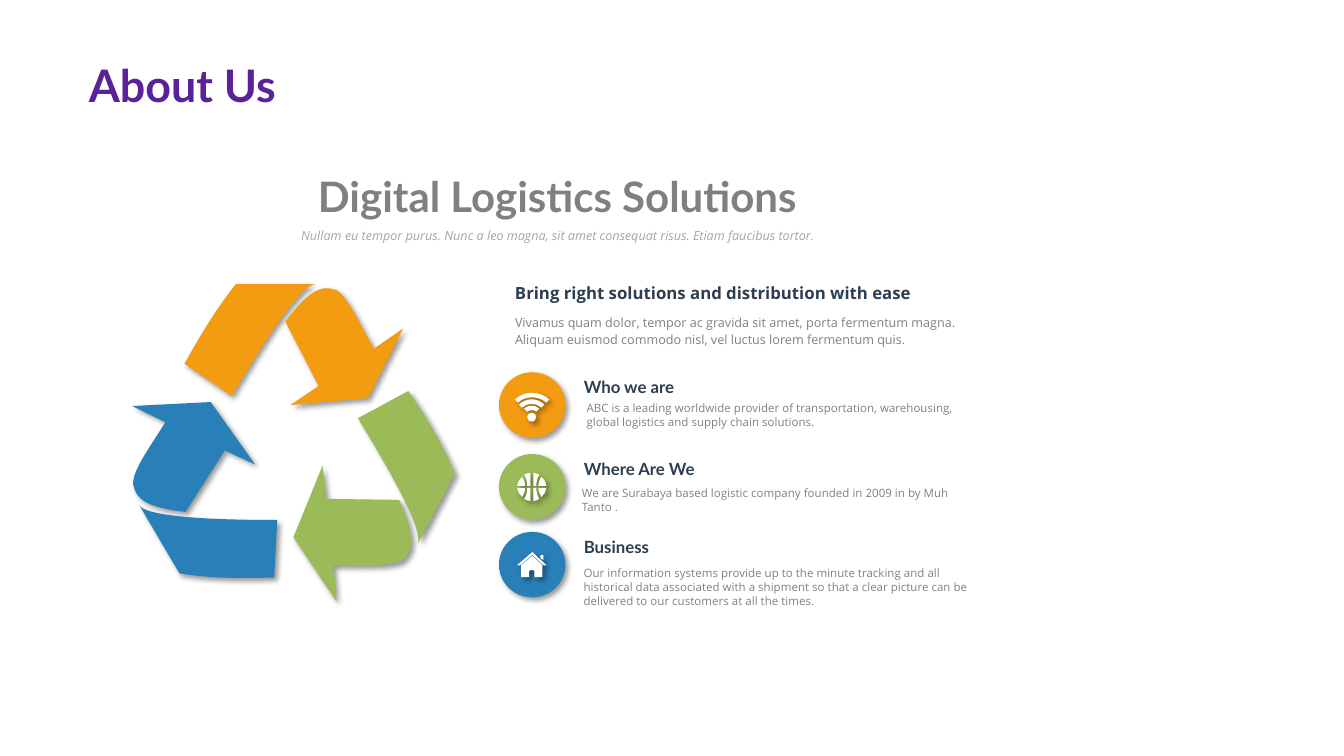
from itertools import chain

from lxml import etree
from pptx import Presentation
from pptx.dml.color import RGBColor
from pptx.enum.shapes import MSO_SHAPE
from pptx.enum.text import MSO_ANCHOR, MSO_AUTO_SIZE, PP_ALIGN
from pptx.oxml.ns import qn
from pptx.util import Pt

ELLIPSE = MSO_SHAPE.OVAL
TOP, MIDDLE = MSO_ANCHOR.TOP, MSO_ANCHOR.MIDDLE
LEFT, CENTER = PP_ALIGN.LEFT, PP_ALIGN.CENTER
FIT_SHAPE = MSO_AUTO_SIZE.SHAPE_TO_FIT_TEXT

ORANGE, GREEN, BLUE = "F39C12", "9BBB59", "2980B9"
PURPLE, NAVY, GRAY, SILVER, WHITE = "592298", "2C3E50", "808080", "A6A6A6", "FFFFFF"
HEADING_FONT, BODY_FONT = "Lato", "Open Sans"
WIDE_INSETS, TIGHT_INSETS = (7.2, 3.6), (3.6, 1.8)
OUTLINE_UNIT = 0.72

ORANGE_ARROW = [
    [(0, 79), (47, 111), (90, 38, 118, 0, 130, 0), (51, 0), (31, 25, 15, 52, 0, 79)],
    [(100, 37), (133, 101), (105, 120), (182, 113), (217, 44), (188, 64),
     (174, 41, 160, 6, 147, 5), (131, 0, 116, 16, 100, 37)],
]
GREEN_ARROW = [
    [(114, 0), (64, 27), (108, 99, 129, 142, 123, 152), (160, 82), (148, 53, 132, 26, 114, 0)],
    [(105, 108), (33, 107), (29, 74), (0, 145), (43, 209), (40, 173),
     (67, 172, 104, 176, 111, 165), (122, 153, 116, 132, 105, 108)],
]
BLUE_ARROW = [
    [(145, 174), (148, 117), (64, 117, 16, 112, 11, 102), (51, 170), (82, 175, 113, 175, 145, 174)],
    [(57, 109), (96, 48), (126, 62), (82, 0), (4, 4), (37, 20),
     (23, 43, 0, 73, 6, 85), (10, 101, 31, 106, 57, 109)],
]
WIFI = [
    [(17, 22), (19, 22, 21, 24, 21, 26), (21, 29, 19, 31, 17, 31),
     (14, 31, 12, 29, 12, 26), (12, 24, 14, 22, 17, 22)],
    [(24, 18), (21, 21), (19, 19, 15, 19, 12, 21), (9, 18), (13, 14, 20, 14, 24, 18)],
    [(29, 14), (26, 17), (21, 12, 12, 12, 7, 17), (4, 14), (11, 7, 22, 7, 29, 14)],
    [(31, 12), (23, 5, 10, 5, 3, 12), (0, 9), (9, 0, 24, 0, 34, 9)],
]
HOUSE = [
    [(4, 25), (12, 25), (12, 19), (13, 18), (16, 18), (17, 19), (17, 25),
     (25, 25), (25, 13), (15, 4), (4, 13)],
    [(26, 3), (23, 3), (23, 6), (26, 8)],
    [(0, 13), (0, 13, 1, 14, 3, 13), (15, 3), (26, 13), (28, 14, 29, 13, 29, 13), (15, 0)],
]
BALL_QUARTER = [
    [(5, 4), (2, 6, 1, 9, 0, 13), (8, 13), (8, 9, 6, 6, 5, 4)],
    [(10, 13), (13, 13), (13, 0), (11, 0, 9, 1, 7, 2), (9, 5, 10, 9, 10, 13)],
]


def mirrored(contour, width, height):
    spans = (width, height)
    return [tuple(abs(spans[i % 2] - value) for i, value in enumerate(step))
            for step in contour]


BALL = [mirrored(contour, width, height)
        for width in (0, 29) for height in (0, 28) for contour in BALL_QUARTER]

TOPICS = [
    (265.9, ORANGE, WIFI, (11.5, 13), "Who we are", 79.9, (59, 18.9, 286.6, 23.8),
     "ABC is a leading worldwide provider of transportation, warehousing, "
     "global logistics and supply chain solutions."),
    (324.3, GREEN, BALL, (13, 13.4), "Where Are We", 95.8, (55.6, 21, 286.6, 23.8),
     "We are Surabaya based logistic company founded in 2009 in by Muh Tanto ."),
    (379.9, BLUE, HOUSE, (13, 14.4), "Business", 61.9, (56.9, 22.5, 286.6, 33.8),
     "Our information systems provide up to the minute tracking and all historical data "
     "associated with a shipment so that a clear picture can be delivered to our customers "
     "at all the times."),
]


def color(hex_code):
    return RGBColor.from_string(hex_code)


def paint(shape, fill):
    shape.fill.solid()
    shape.fill.fore_color.rgb = color(fill)
    shape.line.fill.background()
    shape.shadow.inherit = False
    effects = shape._element.spPr.find(qn("a:effectLst"))
    shadow = etree.SubElement(effects, qn("a:outerShdw"), blurRad=str(Pt(4)), dist=str(Pt(3)),
                              dir="2700000", algn="tl", rotWithShape="0")
    black = etree.SubElement(shadow, qn("a:srgbClr"), val="000000")
    etree.SubElement(black, qn("a:alpha"), val="40000")


def outline_length(value):
    return Pt(value * OUTLINE_UNIT)


def bend(shape, steps):
    min_x = min(step[-2] for step in steps)
    min_y = min(step[-1] for step in steps)
    segments = list(shape._element.iter(qn("a:moveTo"), qn("a:lnTo")))
    for segment, step in zip(segments, steps):
        if len(step) == 2:
            continue
        segment.tag = qn("a:cubicBezTo")
        for i in (0, 2):
            control = etree.Element(qn("a:pt"), x=str(outline_length(step[i] - min_x)),
                                    y=str(outline_length(step[i + 1] - min_y)))
            segment.insert(i // 2, control)


def add_outline(slide, left, top, contours, fill):
    first, *others = [[tuple(map(outline_length, step[-2:])) for step in contour]
                      for contour in contours]
    builder = slide.shapes.build_freeform(*first[0])
    builder.add_line_segments(first[1:], close=True)
    for points in others:
        builder.move_to(*points[0])
        builder.add_line_segments(points[1:], close=True)
    shape = builder.convert_to_shape(Pt(left), Pt(top))
    bend(shape, list(chain.from_iterable(contours)))
    paint(shape, fill)


def write(shape, text, font, size, hex_code, insets, anchor=TOP, align=LEFT,
          bold=False, italic=False, wrap=True, spacing=None, after=None):
    frame = shape.text_frame
    frame.text = text
    frame.word_wrap = wrap
    frame.auto_size = FIT_SHAPE
    frame.vertical_anchor = anchor
    frame.margin_left = frame.margin_right = Pt(insets[0])
    frame.margin_top = frame.margin_bottom = Pt(insets[1])
    paragraph = frame.paragraphs[0]
    paragraph.alignment = align
    if spacing:
        paragraph.line_spacing = spacing
    if after:
        paragraph.space_after = Pt(after)
    style = paragraph.runs[0].font
    style.name, style.size = font, Pt(size)
    style.bold, style.italic = bold, italic
    style.color.rgb = color(hex_code)


def add_text(slide, box, *content, **options):
    write(slide.shapes.add_textbox(*map(Pt, box)), *content, **options)


def add_title(slide, left, top, width, height):
    title = slide.shapes.title
    title.left, title.top, title.width, title.height = map(Pt, (left, top, width, height))
    write(title, "About Us", HEADING_FONT, 32, PURPLE, TIGHT_INSETS,
          anchor=MIDDLE, bold=True, spacing=0.9)


def add_banner(slide, left, top, width):
    add_text(slide, (left, top + 41.4, width, 14.4),
             "Nullam eu tempor purus. Nunc a leo magna, sit amet consequat risus. "
             "Etiam faucibus tortor.",
             BODY_FONT, 9, SILVER, TIGHT_INSETS, anchor=MIDDLE, align=CENTER, italic=True)
    add_text(slide, (left + 140.4, top, 352.8, 40.3), "Digital Logistics Solutions",
             HEADING_FONT, 30, GRAY, TIGHT_INSETS, align=CENTER, bold=True, wrap=False)


def add_cycle(slide, left, top):
    for dx, dy, arrow, fill in [(40.3, 0, ORANGE_ARROW, ORANGE),
                                (118.1, 76.3, GREEN_ARROW, GREEN),
                                (0, 84.2, BLUE_ARROW, BLUE)]:
        add_outline(slide, left + dx, top + dy, arrow, fill)


def add_intro(slide, left, top):
    add_text(slide, (left, top, 324, 23), "Bring right solutions and distribution with ease",
             BODY_FONT, 12, NAVY, WIDE_INSETS, bold=True, spacing=1.15, after=7.5)
    add_text(slide, (left, top + 23.4, 337.7, 32.4),
             "Vivamus quam dolor, tempor ac gravida sit amet, porta fermentum magna. "
             "Aliquam euismod commodo nisl, vel luctus lorem fermentum quis.",
             BODY_FONT, 9, GRAY, WIDE_INSETS, spacing=1.15, after=7.5)


def add_topic(slide, left, top, fill, icon, icon_offset, heading, heading_width, body_box, body):
    badge = slide.shapes.add_shape(ELLIPSE, Pt(left), Pt(top), Pt(47.5), Pt(46.8))
    paint(badge, fill)
    add_outline(slide, left + icon_offset[0], top + icon_offset[1], icon, WHITE)
    add_text(slide, (left + 53.6, top - 0.2, heading_width, 21.6), heading,
             HEADING_FONT, 12, NAVY, WIDE_INSETS, bold=True, wrap=False)
    dx, dy, width, height = body_box
    add_text(slide, (left + dx, top + dy, width, height), body,
             BODY_FONT, 8.25, GRAY, TIGHT_INSETS)


def main():
    presentation = Presentation()
    presentation.slide_width, presentation.slide_height = Pt(960), Pt(540)
    slide = presentation.slides.add_slide(presentation.slide_layouts[5])
    add_title(slide, 59.8, 43.4, 776.2, 38.9)
    add_banner(slide, 81.4, 119.8, 633.6)
    add_cycle(slide, 91.5, 203)
    add_intro(slide, 360.8, 196.3)
    for top, *topic in TOPICS:
        add_topic(slide, 356.4, top, *topic)
    presentation.save("out.pptx")


if __name__ == "__main__":
    main()
